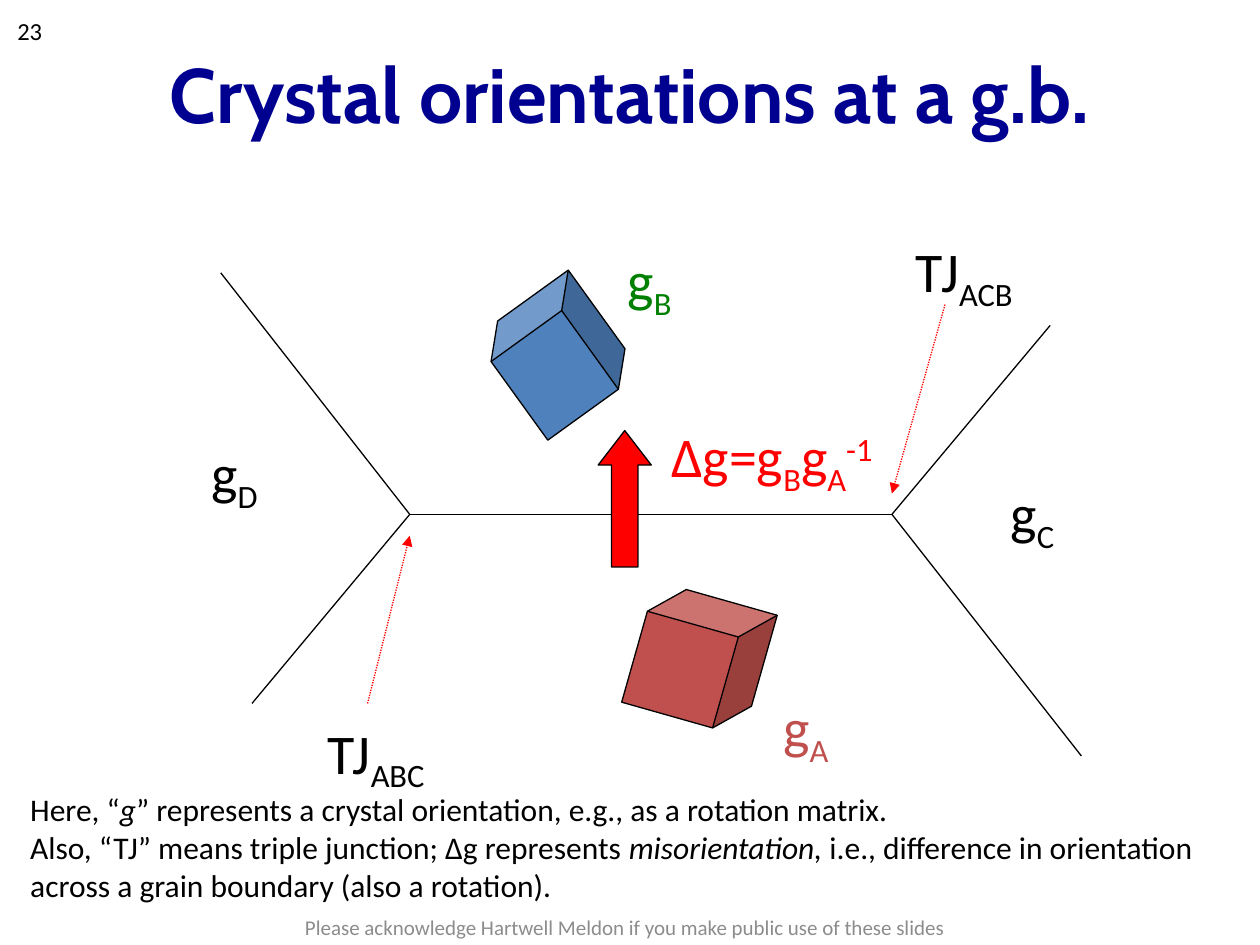
from typing import NamedTuple

from lxml.etree import SubElement
from pptx import Presentation
from pptx.dml.color import RGBColor
from pptx.enum.dml import MSO_LINE_DASH_STYLE as Dash
from pptx.enum.shapes import MSO_CONNECTOR as Conn, MSO_SHAPE as Shape
from pptx.enum.text import MSO_ANCHOR as Anchor, PP_ALIGN as Align
from pptx.oxml.ns import qn
from pptx.util import Cm, Pt

BLACK, RED, BRICK, BLUE, GREEN = "000000", "FF0000", "C0504D", "4F81BD", "008000"
SUB, SUPER = -25, 30


class Run(NamedTuple):
    text: str
    baseline: int = 0
    italic: bool = False


class Box(NamedTuple):
    x: float
    y: float
    w: float
    h: float


class Point(NamedTuple):
    x: float
    y: float


class Label(NamedTuple):
    box: Box
    runs: list[Run]
    color: str = BLACK


class Solid(NamedTuple):
    kind: Shape
    box: Box
    fill: str
    adjustments: list[float]
    rotation: float = 0


def rgb(color: str) -> RGBColor:
    return RGBColor.from_string(color)


def add_text(s, box: Box, paragraphs: list[list[Run]], size: float, color: str = BLACK,
             font: str = "Calibri", bold: bool = False, align: Align = Align.LEFT,
             anchor: Anchor = Anchor.TOP, wrap: bool = True) -> None:
    tf = s.shapes.add_textbox(*map(Cm, box)).text_frame
    tf.word_wrap, tf.vertical_anchor = wrap, anchor
    for i, runs in enumerate(paragraphs):
        p = tf.add_paragraph() if i else tf.paragraphs[0]
        p.alignment = align
        p.font.name, p.font.size, p.font.bold = font, Pt(size), bold
        p.font.color.rgb = rgb(color)
        for run in runs:
            r = p.add_run()
            r.text = run.text
            if run.italic:
                r.font.italic = True
            if run.baseline:
                r._r.get_or_add_rPr().set("baseline", str(run.baseline * 1000))


def add_line(s, start: Point, end: Point, color: str = BLACK, pointer: bool = False) -> None:
    """Draw a plain line, or a dotted one with an arrowhead at its end."""
    line = s.shapes.add_connector(Conn.STRAIGHT, *map(Cm, (*start, *end)))
    line.line.color.rgb, line.line.width = rgb(color), Pt(0.75)
    if pointer:
        line.line.dash_style = Dash.ROUND_DOT
        SubElement(line.line._get_or_add_ln(), qn("a:tailEnd"), type="triangle")
    SubElement(line._element.spPr, qn("a:effectLst"))


def add_solid(s, solid: Solid) -> None:
    sp = s.shapes.add_shape(solid.kind, *map(Cm, solid.box))
    sp.shadow.inherit = False
    sp.rotation = solid.rotation
    for i, value in enumerate(solid.adjustments):
        sp.adjustments[i] = value
    sp.fill.solid()
    sp.fill.fore_color.rgb = rgb(solid.fill)
    sp.line.color.rgb, sp.line.width = rgb(BLACK), Pt(0.75)


def symbol(x: float, y: float, w: float, name: str, index: str, color: str = BLACK) -> Label:
    """A name with a subscript."""
    return Label(Box(x, y, w, 1.63), [Run(name), Run(index, SUB)], color)


LEFT_JUNCTION, RIGHT_JUNCTION = Point(8.26, 10.37), Point(17.98, 10.37)
BOUNDARIES = [
    (LEFT_JUNCTION, RIGHT_JUNCTION),
    (RIGHT_JUNCTION, Point(21.17, 6.56)),
    (RIGHT_JUNCTION, Point(21.8, 15.24)),
    (LEFT_JUNCTION, Point(5.08, 14.18)),
    (LEFT_JUNCTION, Point(4.45, 5.5)),
]
POINTERS = [
    (Point(7.41, 14.18), Point(8.26, 10.8)),
    (Point(19.05, 6.14), Point(17.98, 9.95)),
]
SOLIDS = [
    Solid(Shape.CUBE, Box(10.08, 5.89, 2.34, 2.54), BLUE, [0.25], 324.2),
    Solid(Shape.CUBE, Box(12.83, 12.01, 2.54, 2.54), BRICK, [0.25], 15.8),
    Solid(Shape.UP_ARROW, Box(12.06, 8.68, 1.07, 2.75), RED, [0.5, 0.65]),
]
LABELS = [
    symbol(15.54, 13.84, 1.5, "g", "A", BRICK),
    symbol(12.4, 4.83, 1.47, "g", "B", GREEN),
    symbol(20.12, 9.53, 1.45, "g", "C"),
    symbol(4.01, 8.71, 1.52, "g", "D"),
    symbol(6.35, 14.35, 2.69, "TJ", "ABC"),
    symbol(18.21, 4.65, 2.69, "TJ", "ACB"),
    Label(Box(13.28, 8.38, 4.8, 1.63),
          [Run("∆g=g"), Run("B", SUB), Run("g"), Run("A", SUB), Run("-1", SUPER)], RED),
]
EXPLANATION = [
    [Run("Here, “"), Run("g", italic=True),
     Run("” represents a crystal orientation, e.g., as a rotation matrix.")],
    [Run("Also, “TJ” means triple junction; ∆g represents "),
     Run("misorientation,", italic=True),
     Run(" i.e., difference in orientation across a grain boundary (also a rotation).")],
]
CREDIT = "Please acknowledge Hartwell Meldon if you make public use of these slides"


def main() -> None:
    prs = Presentation()
    prs.slide_width, prs.slide_height = Cm(25.4), Cm(19.05)
    s = prs.slides.add_slide(prs.slide_layouts[6])

    add_text(s, Box(0.1, 0.1, 1.98, 1.02), [[Run("23")]], 14, anchor=Anchor.MIDDLE)
    add_text(s, Box(1.27, 0.28, 22.86, 3.18), [[Run("Crystal orientations at a g.b.")]], 44,
             "000090", "Cabin", bold=True, align=Align.CENTER, anchor=Anchor.MIDDLE)
    for start, end in BOUNDARIES:
        add_line(s, start, end)
    for start, end in POINTERS:
        add_line(s, start, end, RED, pointer=True)
    for solid in SOLIDS:
        add_solid(s, solid)
    for label in LABELS:
        add_text(s, label.box, [label.runs], 32, label.color, wrap=False)
    add_text(s, Box(0.36, 15.8, 24.74, 2.57), EXPLANATION, 18)
    add_text(s, Box(4.6, 18.36, 16, 0.66), [[Run(CREDIT)]], 12, "8C8C8C",
             align=Align.CENTER, anchor=Anchor.MIDDLE)

    prs.save("out.pptx")


if __name__ == "__main__":
    main()
